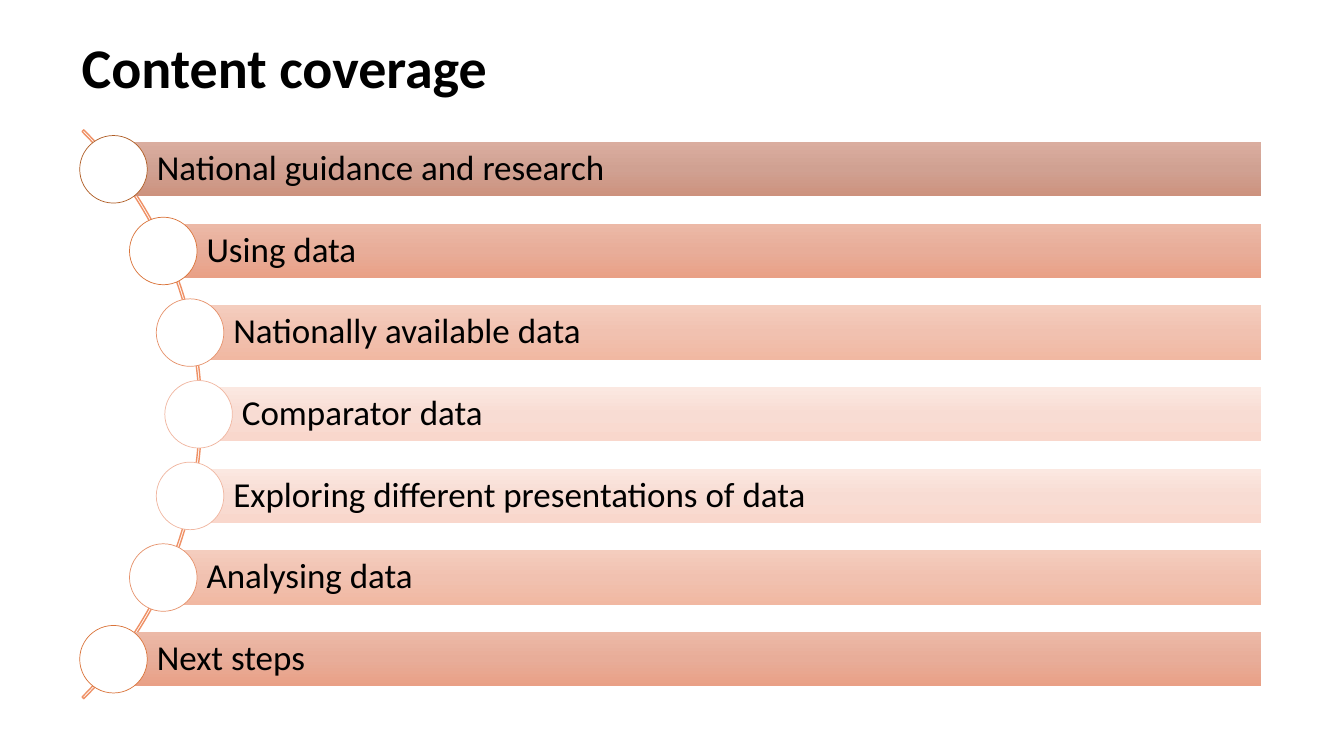
from copy import deepcopy
from math import sqrt

from pptx import Presentation
from pptx.dml.color import RGBColor
from pptx.enum.shapes import MSO_SHAPE
from pptx.enum.text import MSO_ANCHOR, MSO_AUTO_SIZE, PP_ALIGN
from pptx.oxml.ns import qn
from pptx.util import Inches, Pt

RECTANGLE, OVAL, BLOCK_ARC = MSO_SHAPE.RECTANGLE, MSO_SHAPE.OVAL, MSO_SHAPE.BLOCK_ARC
MIDDLE, LEFT, NO_AUTOFIT = MSO_ANCHOR.MIDDLE, PP_ALIGN.LEFT, MSO_AUTO_SIZE.NONE
TITLE_ONLY_LAYOUT = 5


class Theme:
    font = "Calibri"
    title_size, topic_size = 40, 25
    text, circle, arc = "000000", "FFFFFF", "EF9166"
    # Each tone: three gradient colours of the bar, then the circle outline
    tones = {
        "brown": (("DAAD9F", "D0A192", "CD927E"), "AF5C24"),
        "coral": (("ECB9A7", "E8AD99", "E9A086"), "DA7339"),
        "peach": (("F4CDBE", "F1C1B0", "F1B8A2"), "E6926C"),
        "blush": (("FBE8E1", "F8DCD3", "F9D7CC"), "F0B6A0"),
    }


TOPICS = [
    ("National guidance and research", "brown"),
    ("Using data", "coral"),
    ("Nationally available data", "peach"),
    ("Comparator data", "blush"),
    ("Exploring different presentations of data", "blush"),
    ("Analysing data", "peach"),
    ("Next steps", "coral"),
]

# Grid in inches: rows around a middle line, circles along a curve
SLIDE_WIDTH, SLIDE_HEIGHT = 13.33, 7.5
MIDDLE_Y, ROW_STEP = 4.11, 0.81
BAR_HEIGHT, BAR_RIGHT, CIRCLE_SIZE = 0.54, 12.51, 0.67
CURVE_X, CURVE_RADIUS = -1.95, 3.92
ARC_X, ARC_SIZE = -1.99, 7.98


def set_attributes(target, values):
    for name, value in values.items():
        setattr(target, name, value)


def add_outlined_shape(slide, kind, box, line_color=None, line_width=1):
    shape = slide.shapes.add_shape(kind, *map(Inches, box))
    shape.shadow.inherit = False
    if line_color:
        shape.line.color.rgb = RGBColor.from_string(line_color)
        shape.line.width = Pt(line_width)
    else:
        shape.line.fill.background()
    return shape


def fill_gradient(shape, colors):
    """Spread the colours evenly from top to bottom."""
    shape.fill.gradient()
    shape.fill.gradient_angle = 270
    stop_list = shape._element.spPr.find(qn("a:gradFill")).find(qn("a:gsLst"))
    stop_list.append(deepcopy(stop_list[-1]))
    for index, (stop, color) in enumerate(zip(shape.fill.gradient_stops, colors)):
        stop.color.rgb = RGBColor.from_string(color)
        stop.position = index / (len(colors) - 1)


def write_text(shape, text, size, bold=False, margins=(0.1, 0.05, 0.1, 0.05)):
    frame = shape.text_frame
    sides = ("margin_left", "margin_top", "margin_right", "margin_bottom")
    set_attributes(frame, {"text": text, "word_wrap": True, "auto_size": NO_AUTOFIT,
                           "vertical_anchor": MIDDLE})
    set_attributes(frame, dict(zip(sides, map(Inches, margins))))
    paragraph = frame.paragraphs[0]
    set_attributes(paragraph, {"alignment": LEFT, "line_spacing": 0.9})
    font = paragraph.runs[0].font
    set_attributes(font, {"name": Theme.font, "size": Pt(size), "bold": bold})
    font.color.rgb = RGBColor.from_string(Theme.text)


def add_title(slide, text):
    title = slide.shapes.title
    set_attributes(title, {"left": Inches(0.71), "top": Inches(0.43),
                           "width": Inches(5.8), "height": Inches(0.54)})
    write_text(title, text, Theme.title_size, bold=True)


def add_arc(slide):
    box = (ARC_X - ARC_SIZE / 2, MIDDLE_Y - ARC_SIZE / 2, ARC_SIZE, ARC_SIZE)
    arc = add_outlined_shape(slide, BLOCK_ARC, box, Theme.arc)
    arc.fill.background()
    # Start angle, end angle and band thickness
    for index, value in enumerate((189, 27, 0.003)):
        arc.adjustments[index] = value


def add_topic(slide, offset, text, tone):
    colors, outline = Theme.tones[tone]
    center_y = MIDDLE_Y + offset
    center_x = CURVE_X + sqrt(CURVE_RADIUS ** 2 - offset ** 2)

    # Bar with its label
    bar = add_outlined_shape(slide, RECTANGLE, (
        center_x, center_y - BAR_HEIGHT / 2, BAR_RIGHT - center_x, BAR_HEIGHT))
    fill_gradient(bar, colors)
    write_text(bar, text, Theme.topic_size, margins=(0.43, 0.07, 0.07, 0.07))

    # Circle at the start of the bar
    circle = add_outlined_shape(slide, OVAL, (
        center_x - CIRCLE_SIZE / 2, center_y - CIRCLE_SIZE / 2,
        CIRCLE_SIZE, CIRCLE_SIZE), outline, 0.5)
    circle.fill.solid()
    circle.fill.fore_color.rgb = RGBColor.from_string(Theme.circle)


def main():
    presentation = Presentation()
    set_attributes(presentation, {"slide_width": Inches(SLIDE_WIDTH),
                                  "slide_height": Inches(SLIDE_HEIGHT)})
    slide = presentation.slides.add_slide(presentation.slide_layouts[TITLE_ONLY_LAYOUT])
    add_title(slide, "Content coverage")
    add_arc(slide)
    middle_row = (len(TOPICS) - 1) / 2
    for row, (text, tone) in enumerate(TOPICS):
        add_topic(slide, (row - middle_row) * ROW_STEP, text, tone)
    presentation.save("out.pptx")


if __name__ == "__main__":
    main()
